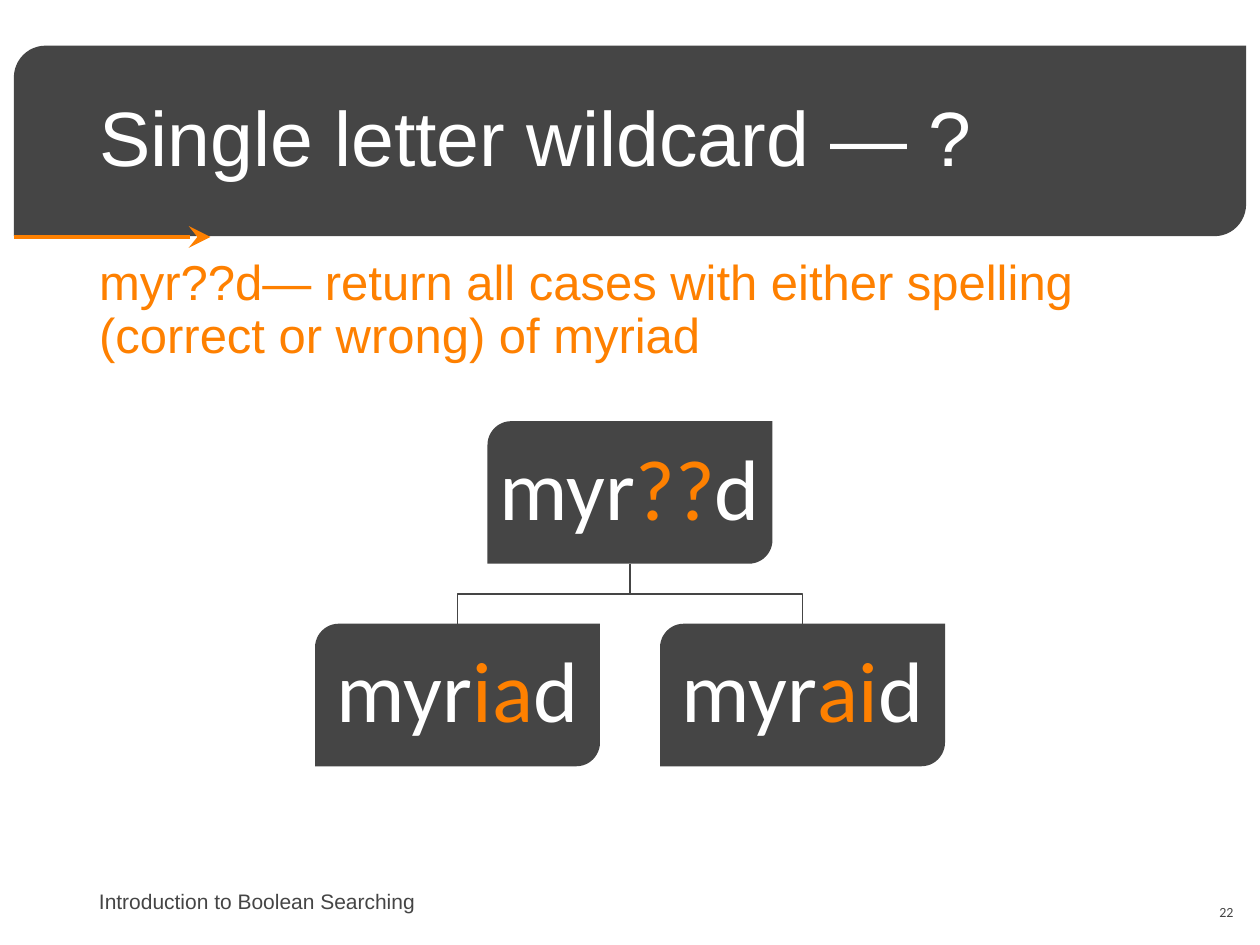
"""Builds the single letter wildcard slide with a small spelling tree."""
from lxml import etree
from pptx import Presentation
from pptx.dml.color import RGBColor
from pptx.enum.shapes import MSO_CONNECTOR, MSO_SHAPE
from pptx.enum.text import MSO_ANCHOR, MSO_AUTO_SIZE, PP_ALIGN
from pptx.oxml.ns import qn
from pptx.util import Pt

DIAGONAL = MSO_SHAPE.ROUND_2_DIAG_RECTANGLE
STRAIGHT = MSO_CONNECTOR.STRAIGHT
LEFT, CENTER, RIGHT = PP_ALIGN.LEFT, PP_ALIGN.CENTER, PP_ALIGN.RIGHT
TOP, MIDDLE = MSO_ANCHOR.TOP, MSO_ANCHOR.MIDDLE
NO_AUTOFIT = MSO_AUTO_SIZE.NONE

COLORS = {"dark": "454545", "orange": "FE8000", "white": "FFFFFF"}

TITLE = "Single letter wildcard — ?"
BODY = "myr??d— return all cases with either spelling (correct or wrong) of myriad"
FOOTER = "Introduction to Boolean Searching"
PAGE = "22"
PATTERN = ("myr", "??", "d")
SPELLINGS = [("myr", "ia", "d"), ("myr", "ai", "d")]
WORD_COLORS = ("white", "orange", "white")

BANNER = (7.92, 26.1, 704.16, 108.9)
ARROW = (7.92, 135.4, 120.3, 135.4)
TITLE_BOX = (49.5, 28.75, 621, 104.4)
BODY_BOX = (49.5, 143.75, 621, 342.7)
FOOTER_BOX = (49.5, 500.5, 238.5, 28.75)
PAGE_BOX = (550, 507, 162, 28.75)
NODE_W, NODE_H, GAP = 162.86, 81.43, 34.3
TREE_CENTER, TREE_TOP = 360, 240.7

FORMATS = {
    "title": {"name": "Arial", "size": Pt(44)},
    "body": {"name": "Arial", "size": Pt(28)},
    "word": {"name": "Calibri", "size": Pt(49)},
    "footer": {"name": "Arial", "size": Pt(12)},
    "page": {"name": "Calibri", "size": Pt(8)},
}


def rgb(color):
    return RGBColor.from_string(COLORS[color])


def assign(target, values):
    for key, value in values.items():
        setattr(target, key, value)


def place(shape, box):
    assign(shape, dict(zip(("left", "top", "width", "height"), map(Pt, box))))


def write(shape, runs, style, align=LEFT, anchor=MIDDLE, spacing=0.9):
    frame = shape.text_frame
    assign(frame, {"word_wrap": True, "auto_size": NO_AUTOFIT, "vertical_anchor": anchor})
    paragraph = frame.paragraphs[0]
    assign(paragraph, {"alignment": align, "line_spacing": spacing, "space_before": Pt(0)})
    for text, color in runs:
        run = paragraph.add_run()
        run.text = text
        assign(run.font, FORMATS[style])
        run.font.color.rgb = rgb(color)


def add_panel(shapes, box):
    panel = shapes.add_shape(DIAGONAL, *map(Pt, box))
    panel.shadow.inherit = False
    panel.fill.solid()
    panel.fill.fore_color.rgb = rgb("dark")
    panel.line.fill.background()
    return panel


def add_node(shapes, left, top, word):
    node = add_panel(shapes, (left, top, NODE_W, NODE_H))
    margins = ("margin_left", "margin_top", "margin_right", "margin_bottom")
    assign(node.text_frame, dict.fromkeys(margins, Pt(2.2)))
    write(node, zip(word, WORD_COLORS), "word", CENTER)


def add_branch(shapes, child_center):
    start = TREE_TOP + NODE_H
    bend = start + GAP / 2
    builder = shapes.build_freeform(Pt(TREE_CENTER), Pt(start))
    corners = [(TREE_CENTER, bend), (child_center, bend), (child_center, start + GAP)]
    builder.add_line_segments([(Pt(x), Pt(y)) for x, y in corners], close=False)
    branch = builder.convert_to_shape()
    branch.shadow.inherit = False
    branch.fill.background()
    branch.line.color.rgb = rgb("dark")
    branch.line.width = Pt(1)


def add_arrow(shapes):
    arrow = shapes.add_connector(STRAIGHT, *map(Pt, ARROW))
    arrow.line.color.rgb = rgb("orange")
    arrow.line.width = Pt(2.5)
    etree.SubElement(arrow.line._get_or_add_ln(), qn("a:tailEnd"), type="stealth", w="lg", len="lg")
    etree.SubElement(arrow._element.spPr, qn("a:effectLst"))
    return arrow


def main():
    deck = Presentation()
    assign(deck, {"slide_width": Pt(720), "slide_height": Pt(540)})
    slide = deck.slides.add_slide(deck.slide_layouts[1])
    shapes = slide.shapes

    for position, backdrop in enumerate((add_panel(shapes, BANNER), add_arrow(shapes)), 2):
        shapes._spTree.insert(position, backdrop._element)

    title, body = shapes.title, slide.placeholders[1]
    place(title, TITLE_BOX)
    write(title, [(TITLE, "white")], "title")
    place(body, BODY_BOX)
    properties = body.text_frame.paragraphs[0]._p.get_or_add_pPr()
    assign_indent = {"marL": "0", "indent": "0"}
    properties.attrib.update(assign_indent)
    etree.SubElement(properties, qn("a:buNone"))
    write(body, [(BODY, "orange")], "body", anchor=TOP)

    step = NODE_W + GAP
    first_center = TREE_CENTER - step * (len(SPELLINGS) - 1) / 2
    centers = [first_center + step * index for index in range(len(SPELLINGS))]
    for center in centers:
        add_branch(shapes, center)
    add_node(shapes, TREE_CENTER - NODE_W / 2, TREE_TOP, PATTERN)
    for center, spelling in zip(centers, SPELLINGS):
        add_node(shapes, center - NODE_W / 2, TREE_TOP + NODE_H + GAP, spelling)

    for text, box, style, align in ((PAGE, PAGE_BOX, "page", RIGHT), (FOOTER, FOOTER_BOX, "footer", LEFT)):
        write(shapes.add_textbox(*map(Pt, box)), [(text, "dark")], style, align, spacing=1.0)

    deck.save("out.pptx")


if __name__ == "__main__":
    main()
